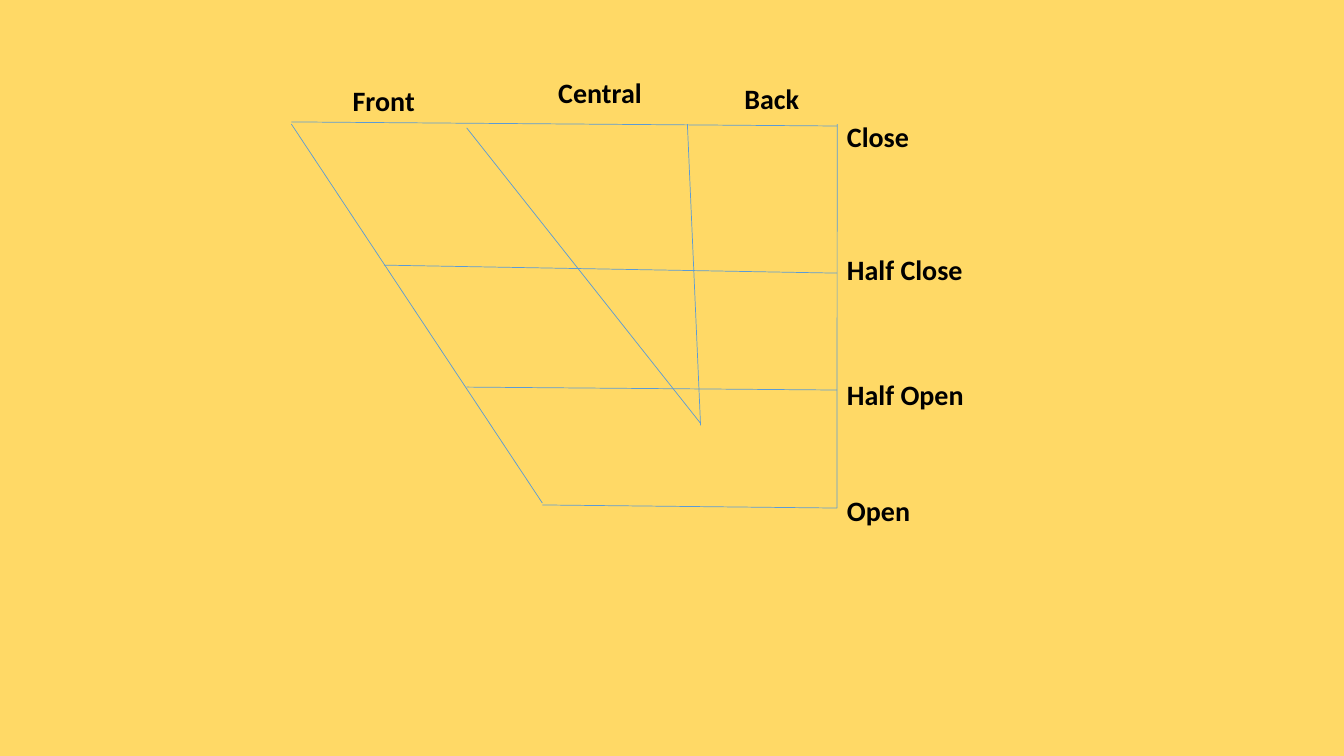
from lxml.etree import SubElement
from pptx import Presentation
from pptx.dml.color import RGBColor
from pptx.enum.shapes import MSO_CONNECTOR
from pptx.enum.text import MSO_AUTO_SIZE
from pptx.oxml.ns import qn
from pptx.util import Pt

COLORS = {"background": "FFD966", "line": "5B9BD5", "text": "000000"}
LABEL_FONT = {"name": "Calibri", "size": Pt(20), "bold": True}
LABEL_HEIGHT = 31.5
BACK_X = 597.9

VOWEL_LINES = [
    (208.1, 87.1, BACK_X, 90),
    (BACK_X, 362.9, BACK_X + 0.1, 88.6),
    (387.4, 360.7, BACK_X, 362.9),
    (208.1, 88.6, 387.4, 359.3),
    (491, 88.6, 500.4, 303.8),
    (333.4, 91.4, 500.4, 302.4),
    (333.4, 276.5, BACK_X, 278.6),
    (274.3, 189.4, BACK_X, 195.1),
]
TONGUE_PARTS = [
    ("Front", 244.8, 56.2, 59),
    ("Central", 391.7, 50.4, 74.9),
    ("Back", 524.6, 54.7, 54),
]
TONGUE_HEIGHTS = [
    ("Close", 82.1, 59),
    ("Half Close", 176.8, 97.9),
    ("Half Open", 266, 98.6),
    ("Open", 349.2, 59.8),
]


def rgb(name):
    return RGBColor.from_string(COLORS[name])


def add_line(slide, ends):
    line = slide.shapes.add_connector(MSO_CONNECTOR.STRAIGHT, *map(Pt, ends))
    line.line.color.rgb = rgb("line")
    line.line.width = Pt(0.5)
    SubElement(line._element.spPr, qn("a:effectLst"))


def add_label(slide, text, left, top, width):
    box = slide.shapes.add_textbox(*map(Pt, (left, top, width, LABEL_HEIGHT)))
    tf = box.text_frame
    tf.word_wrap = False
    tf.auto_size = MSO_AUTO_SIZE.SHAPE_TO_FIT_TEXT
    r = tf.paragraphs[0].add_run()
    r.text = text
    for key, value in LABEL_FONT.items():
        setattr(r.font, key, value)
    r.font.color.rgb = rgb("text")


def main():
    prs = Presentation()
    prs.slide_width, prs.slide_height = Pt(960), Pt(540)
    slide = prs.slides.add_slide(prs.slide_layouts[6])
    fill = slide.background.fill
    fill.solid()
    fill.fore_color.rgb = rgb("background")

    for ends in VOWEL_LINES:
        add_line(slide, ends)
    for label in TONGUE_PARTS:
        add_label(slide, *label)
    for text, top, width in TONGUE_HEIGHTS:
        add_label(slide, text, BACK_X, top, width)

    prs.save("out.pptx")


if __name__ == "__main__":
    main()
